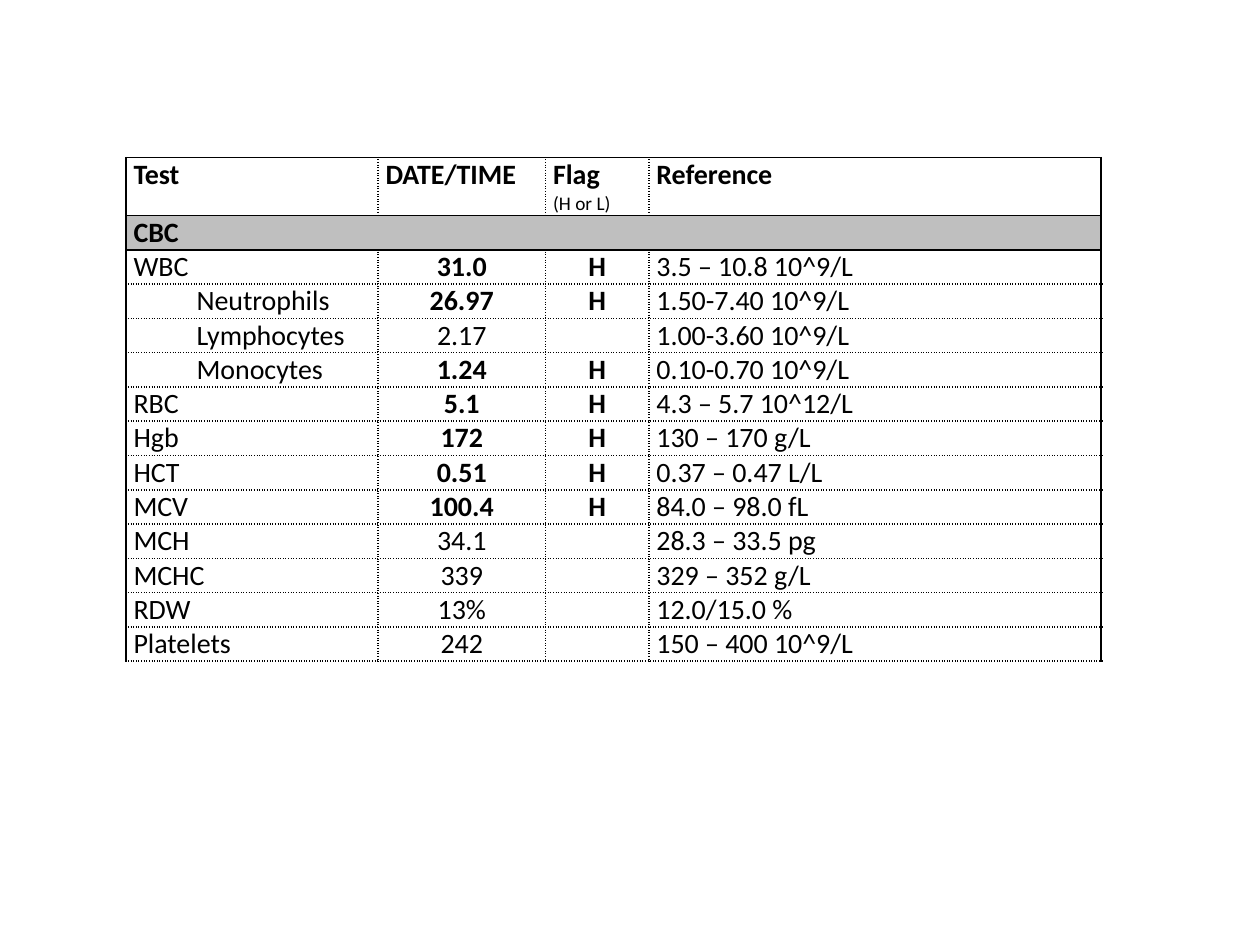
from lxml.etree import SubElement
from pptx import Presentation
from pptx.dml.color import RGBColor
from pptx.enum.text import PP_ALIGN
from pptx.oxml.ns import qn
from pptx.util import Inches, Pt

BLACK = RGBColor(0x00, 0x00, 0x00)
WHITE = RGBColor(0xFF, 0xFF, 0xFF)
GREY = RGBColor(0xBF, 0xBF, 0xBF)
FONT, SIZE, SMALL = "Calibri", 16, 11

# Content
HEADERS = ["Test", "DATE/TIME", "Flag", "Reference"]
FLAG_NOTE = "(H or L)"
SECTION = "CBC"
RESULTS = [
    ("WBC", "31.0", "H", "3.5 – 10.8 10^9/L"),
    ("Neutrophils", "26.97", "H", "1.50-7.40 10^9/L"),
    ("Lymphocytes", "2.17", "", "1.00-3.60 10^9/L"),
    ("Monocytes", "1.24", "H", "0.10-0.70 10^9/L"),
    ("RBC", "5.1", "H", "4.3 – 5.7 10^12/L"),
    ("Hgb", "172", "H", "130 – 170 g/L"),
    ("HCT", "0.51", "H", "0.37 – 0.47 L/L"),
    ("MCV", "100.4", "H", "84.0 – 98.0 fL"),
    ("MCH", "34.1", "", "28.3 – 33.5 pg"),
    ("MCHC", "339", "", "329 – 352 g/L"),
    ("RDW", "13%", "", "12.0/15.0 %"),
    ("Platelets", "242", "", "150 – 400 10^9/L"),
]
SUBTESTS = {"Neutrophils", "Lymphocytes", "Monocytes"}

# Layout
LEFT, TOP = 1, 1.25
COL_WIDTHS = [2, 1.33, 0.82, 3.59]
HEADER_HEIGHT, ROW_HEIGHT = 0.46, 0.27
SUBTEST_INDENT = 0.5


def write(p, text, size=SIZE, bold=False, align=PP_ALIGN.LEFT, indent=0):
    p.alignment = align
    if indent:
        p._p.get_or_add_pPr().set("marL", str(Inches(indent)))
    if text:
        r = p.add_run()
        r.text = text
        r.font.name, r.font.size, r.font.bold = FONT, Pt(size), bold
        r.font.color.rgb = BLACK
    else:  # an empty cell keeps the row at the table's text size
        SubElement(p._p, qn("a:endParaRPr"), sz=str(size * 100))


def set_border(cell, side, dotted):
    ln = SubElement(cell._tc.get_or_add_tcPr(), qn(f"a:ln{side}"), w=str(Pt(1)))
    fill = SubElement(ln, qn("a:solidFill"))
    SubElement(fill, qn("a:srgbClr"), val=str(BLACK))
    SubElement(ln, qn("a:prstDash"), val="dot" if dotted else "solid")


def format_cell(cell, row, col):
    cell.margin_left = cell.margin_right = Inches(0.06)
    cell.margin_top = cell.margin_bottom = 0
    # Solid outer sides and lines around the header and section; dots elsewhere
    set_border(cell, "L", col > 0 and row != 1)
    set_border(cell, "R", col < len(HEADERS) - 1 and row != 1)
    set_border(cell, "T", row > 2)
    set_border(cell, "B", row > 1)
    if row < 2:
        cell.fill.solid()
        cell.fill.fore_color.rgb = GREY if row == 1 else WHITE
    else:
        cell.fill.background()


def main():
    prs = Presentation()
    prs.slide_width, prs.slide_height = Inches(10), Inches(7.5)
    s = prs.slides.add_slide(prs.slide_layouts[6])

    # Table grid
    heights = [HEADER_HEIGHT] + [ROW_HEIGHT] * (len(RESULTS) + 1)
    table = s.shapes.add_table(
        len(heights), len(HEADERS), Inches(LEFT), Inches(TOP),
        Inches(sum(COL_WIDTHS)), Inches(sum(heights))).table
    table.first_row = table.horz_banding = False
    for column, width in zip(table.columns, COL_WIDTHS):
        column.width = Inches(width)
    for i, height in enumerate(heights):
        table.rows[i].height = Inches(height)
        for j in range(len(HEADERS)):
            format_cell(table.cell(i, j), i, j)

    # Header and section rows
    for j, title in enumerate(HEADERS):
        write(table.cell(0, j).text_frame.paragraphs[0], title, bold=True)
    write(table.cell(0, 2).text_frame.add_paragraph(), FLAG_NOTE, size=SMALL)
    table.cell(1, 0).merge(table.cell(1, len(HEADERS) - 1))
    write(table.cell(1, 0).text_frame.paragraphs[0], SECTION, bold=True)

    # Results: flagged values are bold, subtests are indented
    for i, result in enumerate(RESULTS, start=2):
        for j, text in enumerate(result):
            centred = j in (1, 2)
            write(table.cell(i, j).text_frame.paragraphs[0], text,
                  bold=centred and result[2] == "H",
                  align=PP_ALIGN.CENTER if centred else PP_ALIGN.LEFT,
                  indent=SUBTEST_INDENT if text in SUBTESTS else 0)

    prs.save("out.pptx")


if __name__ == "__main__":
    main()
